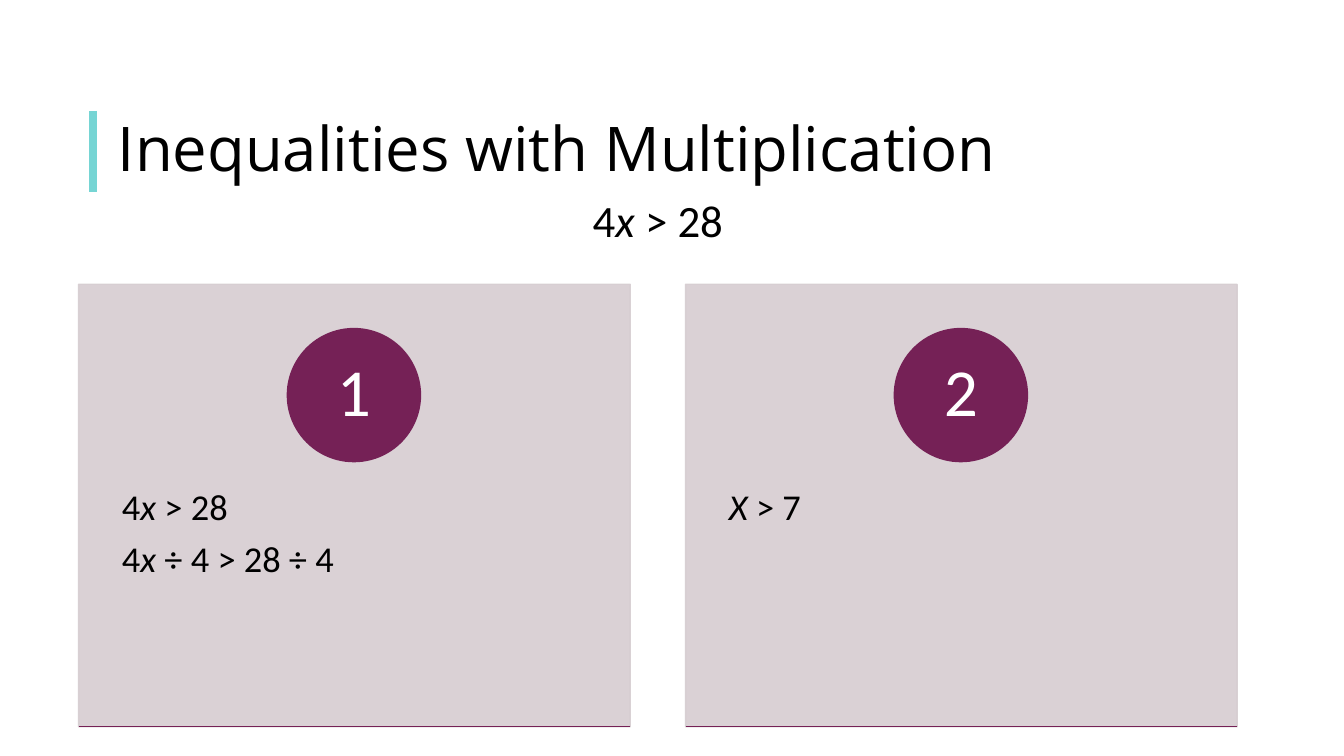
import pptx
import pptx.dml.color
import pptx.enum.shapes
import pptx.enum.text
import pptx.oxml
import pptx.oxml.ns
import pptx.util
from lxml import etree

RGBColor = pptx.dml.color.RGBColor
Shape = pptx.enum.shapes.MSO_SHAPE
Anchor = pptx.enum.text.MSO_ANCHOR
Align = pptx.enum.text.PP_ALIGN

BLACK = RGBColor(0x00, 0x00, 0x00)
WHITE = RGBColor(0xFF, 0xFF, 0xFF)
TEAL = RGBColor(0x76, 0xD5, 0xD4)
PLUM = RGBColor(0x75, 0x21, 0x56)
MAUVE = RGBColor(0xD6, 0xCD, 0xD1)

EMU_PER_PX = 9144  # 100 px to the inch
PAGE_SIZE = (1333, 750)
TITLE_ONLY = 5

CARD_LEFT, CARD_TOP, CARD_WIDTH, CARD_HEIGHT = 78, 282, 547, 439
CARD_PITCH = 602
CIRCLE_TOP, CIRCLE_SIZE = 326, 132
STEPS_TOP, STEPS_HEIGHT = 449, 263
STEPS = [["4*x* > 28", "4*x* ÷ 4 > 28 ÷ 4"], ["*X* > 7"]]


def px(*lengths):
    return [pptx.util.Emu(length * EMU_PER_PX) for length in lengths]


def write(frame, text, size=26, font="Calibri", color=BLACK, align=Align.LEFT,
          anchor=Anchor.TOP, margins=(10, 5), line_spacing=0.9, space_after=0):
    """Fill a frame, one paragraph a line; *asterisks* enclose italics."""
    frame.word_wrap = True
    frame.auto_size = pptx.enum.text.MSO_AUTO_SIZE.NONE
    frame.vertical_anchor = anchor
    frame.margin_left, frame.margin_top = px(*margins)
    frame.margin_right, frame.margin_bottom = px(*margins)
    for index, line in enumerate(text.split("\n")):
        para = frame.add_paragraph() if index else frame.paragraphs[0]
        para.alignment = align
        para.line_spacing = line_spacing
        para.space_before = pptx.util.Pt(0)
        para.space_after = pptx.util.Pt(space_after)
        for position, piece in enumerate(line.split("*")):
            if piece:
                span = para.add_run()
                span.text = piece
                span.font.name = font
                span.font.size = pptx.util.Pt(size)
                span.font.color.rgb = color
                span.font.italic = position % 2 == 1


class Page:
    def __init__(self, deck):
        self.slide = deck.slides.add_slide(deck.slide_layouts[TITLE_ONLY])
        self.shapes = self.slide.shapes

    def title(self, text, *place):
        box = self.shapes.title
        box.left, box.top, box.width, box.height = px(*place)
        write(box.text_frame, text, size=44, font="Open Sans", anchor=Anchor.MIDDLE)

    def text(self, text, *place, **style):
        box = self.shapes.add_textbox(*px(*place))
        write(box.text_frame, text, **style)

    def shape(self, kind, color, *place, opacity=100):
        shape = self.shapes.add_shape(kind, *px(*place))
        shape.shadow.inherit = False
        shape.fill.solid()
        shape.fill.fore_color.rgb = color
        shape.line.color.rgb = color
        shape.line.width = pptx.util.Pt(1)
        if opacity < 100:
            for tint in shape.element.spPr.iter(pptx.oxml.ns.qn("a:srgbClr")):
                alpha = etree.SubElement(tint, pptx.oxml.ns.qn("a:alpha"))
                alpha.set("val", str(opacity * 1000))
        return shape

    def line(self, color, width, *ends):
        line = self.shapes.add_connector(
            pptx.enum.shapes.MSO_CONNECTOR.STRAIGHT, *px(*ends))
        line.line.color.rgb = color
        line.line.width = pptx.util.Pt(width)
        etree.SubElement(line.element.spPr, pptx.oxml.ns.qn("a:effectLst"))

    def card(self, number, steps):
        left = CARD_LEFT + (number - 1) * CARD_PITCH
        bottom = CARD_TOP + CARD_HEIGHT
        self.shape(Shape.RECTANGLE, MAUVE, left, CARD_TOP, CARD_WIDTH,
                   CARD_HEIGHT, opacity=90)
        self.text("\n".join(steps), left, STEPS_TOP, CARD_WIDTH, STEPS_HEIGHT,
                  margins=(43, 36), space_after=9)
        circle = self.shape(Shape.OVAL, PLUM, left + (CARD_WIDTH - CIRCLE_SIZE) // 2,
                            CIRCLE_TOP, CIRCLE_SIZE, CIRCLE_SIZE)
        write(circle.text_frame, str(number), size=48, color=WHITE,
              align=Align.CENTER, anchor=Anchor.MIDDLE, margins=(10, 1))
        self.line(PLUM, 1, left, bottom, left + CARD_WIDTH, bottom)


def main():
    deck = pptx.Presentation()
    deck.slide_width, deck.slide_height = px(*PAGE_SIZE)
    page = Page(deck)
    page.line(TEAL, 6, 92, 110, 92, 190)
    page.title("Inequalities with Multiplication", 107, 110, 1150, 80)
    for number, steps in enumerate(STEPS, start=1):
        page.card(number, steps)
    page.text("4*x* > 28", 360, 186, 585, 64, size=32, align=Align.CENTER,
              line_spacing=1.0)
    deck.save("out.pptx")


if __name__ == "__main__":
    main()
